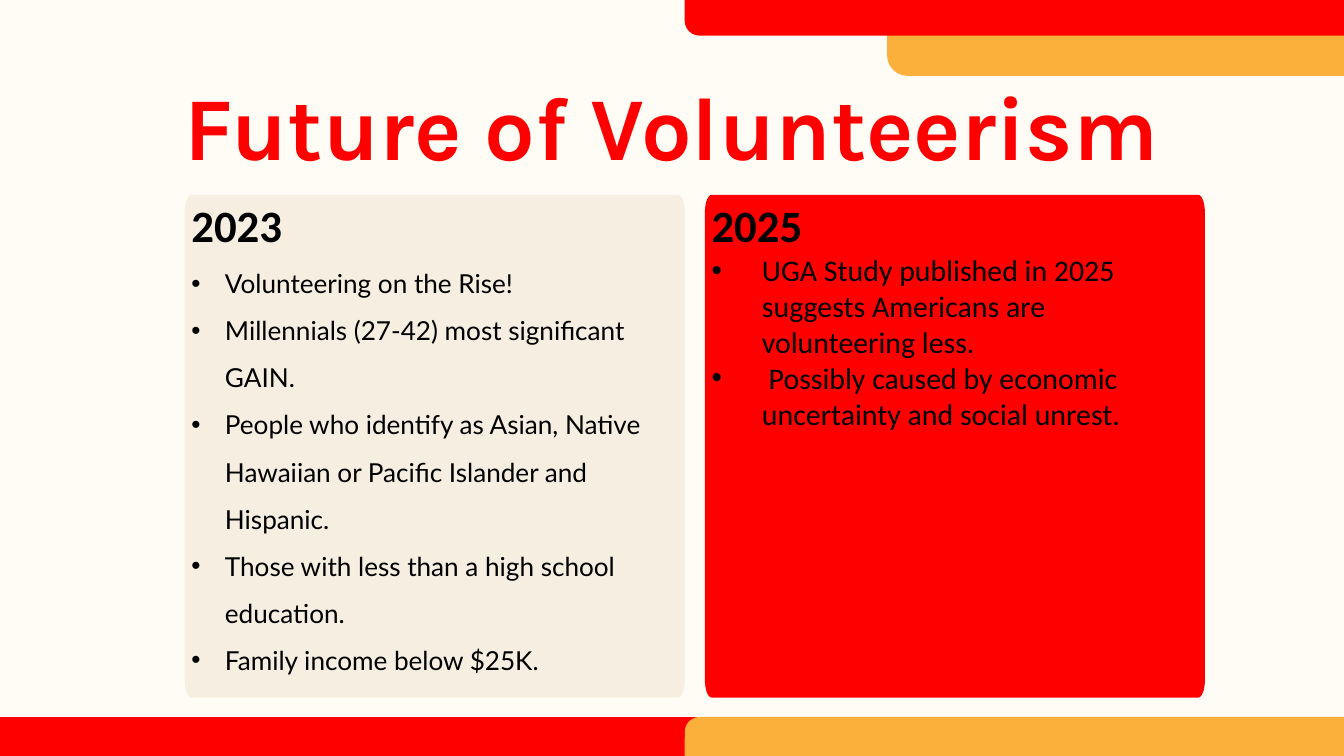
from dataclasses import dataclass
from math import cos, pi, sin

from lxml.etree import SubElement
from pptx import Presentation
from pptx.dml.color import RGBColor
from pptx.enum.shapes import MSO_SHAPE
from pptx.enum.text import MSO_ANCHOR, MSO_AUTO_SIZE, PP_ALIGN
from pptx.oxml.ns import qn
from pptx.util import Inches, Pt

RED, AMBER, CREAM, BLACK = "FF0000", "FBB03B", "F6EEE1", "000000"
BACKGROUND = "FFFBF5"
PANEL_TOP, PANEL_WIDTH, PANEL_HEIGHT = 2.9, 7.44, 7.48
CORNER_WIDTH, CORNER_HEIGHT, CORNER_STEPS = 0.1, 0.26, 8


@dataclass
class Bar:
    left: float
    top: float
    width: float
    height: float
    color: str
    radius: float = 0


@dataclass
class Panel:
    left: float
    color: str
    heading: str
    bullets: list[str]
    font_name: str
    font_size: int
    indent: float
    line_spacing: float


BARS = [
    Bar(-1.01, 10.67, 16.11, 1.95, RED),
    Bar(10.19, 10.67, 12.83, 1.56, AMBER, 0.22),
    Bar(13.2, 0.12, 8.85, 1.01, AMBER, 0.31),
    Bar(10.19, -0.57, 12.4, 1.1, RED, 0.22),
]

PANELS = [
    Panel(2.75, CREAM, "2023", [
        "Volunteering on the Rise!",
        "Millennials (27-42) most significant GAIN.",
        "People who identify as Asian, Native Hawaiian or Pacific Islander and Hispanic.",
        "Those with less than a high school education.",
        "Family income below $25K.",
    ], "Lato", 28, 0.5, 1.5),
    Panel(10.49, RED, "2025", [
        "UGA Study published in 2025 suggests Americans are volunteering less.",
        " Possibly caused by economic uncertainty and social unrest.",
    ], "Calibri", 32, 0.75, 1),
]


def rgb(color: str) -> RGBColor:
    return RGBColor.from_string(color)


def paint(shape, color: str) -> None:
    shape.shadow.inherit = False
    shape.fill.solid()
    shape.fill.fore_color.rgb = rgb(color)
    shape.line.fill.background()


def format_font(paragraph, color: str, **values) -> None:
    for name, value in values.items():
        setattr(paragraph.font, name, value)
    paragraph.font.color.rgb = rgb(color)


def add_bullet(paragraph, indent: float) -> None:
    properties = paragraph._p.get_or_add_pPr()
    properties.set("marL", str(Inches(indent)))
    properties.set("indent", str(Inches(-indent)))
    SubElement(properties, qn("a:buFont"), typeface="Arial")
    SubElement(properties, qn("a:buChar"), char="•")


def add_bar(slide, bar: Bar) -> None:
    kind = MSO_SHAPE.ROUNDED_RECTANGLE if bar.radius else MSO_SHAPE.RECTANGLE
    shape = slide.shapes.add_shape(
        kind, Inches(bar.left), Inches(bar.top), Inches(bar.width), Inches(bar.height))
    if bar.radius:
        shape.adjustments[0] = bar.radius / min(bar.width, bar.height)
    paint(shape, bar.color)


def panel_outline(left: float) -> list[tuple[int, int]]:
    """Trace a rectangle with elliptical corners, clockwise from the right side."""
    center_x, center_y = left + PANEL_WIDTH / 2, PANEL_TOP + PANEL_HEIGHT / 2
    reach_x, reach_y = PANEL_WIDTH / 2 - CORNER_WIDTH, PANEL_HEIGHT / 2 - CORNER_HEIGHT
    points = []
    for corner, (sign_x, sign_y) in enumerate([(1, 1), (-1, 1), (-1, -1), (1, -1)]):
        for step in range(CORNER_STEPS + 1):
            angle = (corner + step / CORNER_STEPS) * pi / 2
            x = center_x + sign_x * reach_x + CORNER_WIDTH * cos(angle)
            y = center_y + sign_y * reach_y + CORNER_HEIGHT * sin(angle)
            points.append((Inches(x), Inches(y)))
    return points


def add_panel(slide, panel: Panel) -> None:
    start, *others = panel_outline(panel.left)
    builder = slide.shapes.build_freeform(*start)
    builder.add_line_segments(others, close=True)
    shape = builder.convert_to_shape()
    paint(shape, panel.color)

    frame = shape.text_frame
    frame.word_wrap = True
    frame.vertical_anchor = MSO_ANCHOR.TOP
    heading = frame.paragraphs[0]
    heading.text = panel.heading
    heading.alignment = PP_ALIGN.LEFT
    format_font(heading, BLACK, name="Calibri", size=Pt(48), bold=True)
    for text in panel.bullets:
        paragraph = frame.add_paragraph()
        paragraph.text = text
        paragraph.alignment = PP_ALIGN.LEFT
        add_bullet(paragraph, panel.indent)
        paragraph.line_spacing = panel.line_spacing
        format_font(paragraph, BLACK, name=panel.font_name,
                    size=Pt(panel.font_size), bold=False)


def format_title(title) -> None:
    box = {"left": 2.75, "top": 1.21, "width": 15.96, "height": 1.48}
    for name, value in box.items():
        setattr(title, name, Inches(value))
    frame = title.text_frame
    for side in ("left", "top", "right", "bottom"):
        setattr(frame, f"margin_{side}", 0)
    frame.word_wrap = True
    frame.auto_size = MSO_AUTO_SIZE.SHAPE_TO_FIT_TEXT
    frame.vertical_anchor = MSO_ANCHOR.TOP
    paragraph = frame.paragraphs[0]
    paragraph.text = "Future of Volunteerism"
    paragraph.alignment = PP_ALIGN.LEFT
    paragraph.line_spacing = Pt(104)
    format_font(paragraph, RED, name="Karla", size=Pt(96), bold=True)


def main() -> None:
    presentation = Presentation()
    presentation.slide_width = Inches(20)
    presentation.slide_height = Inches(11.25)
    slide = presentation.slides.add_slide(presentation.slide_layouts[5])
    slide.background.fill.solid()
    slide.background.fill.fore_color.rgb = rgb(BACKGROUND)

    format_title(slide.shapes.title)
    for bar in BARS:
        add_bar(slide, bar)
    for panel in PANELS:
        add_panel(slide, panel)
    presentation.save("out.pptx")


if __name__ == "__main__":
    main()
